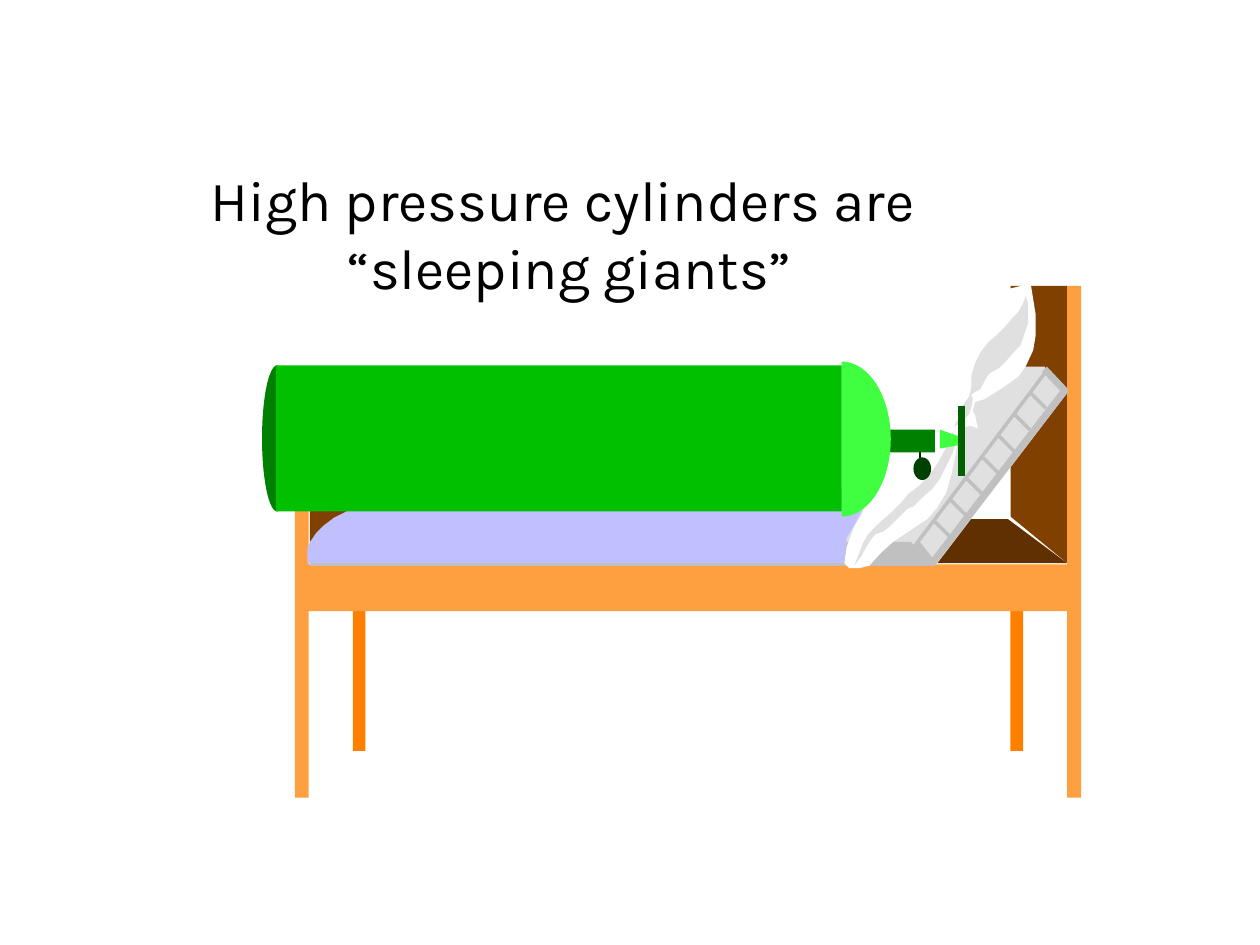
from pptx import Presentation
from pptx.dml.color import RGBColor
from pptx.enum.shapes import MSO_CONNECTOR, MSO_SHAPE
from pptx.enum.text import MSO_ANCHOR, PP_ALIGN
from pptx.oxml.ns import qn
from pptx.util import Pt
from lxml import etree

RECT = MSO_SHAPE.RECTANGLE
OVAL = MSO_SHAPE.OVAL
CHORD = MSO_SHAPE.CHORD
STRAIGHT = MSO_CONNECTOR.STRAIGHT
BOTTOM = MSO_ANCHOR.BOTTOM
CENTER = PP_ALIGN.CENTER

THEME = {
    "font": "Karla", "size": 32.4, "text": "000000",
    "leg": "FF8000", "frame": "FFA040", "board": "804000", "base": "603000",
    "sheet": "E0E0E0", "trim": "C0C0C0", "pillow": "FFFFFF", "cover": "C0C0FF",
    "body": "00C000", "end": "008000", "cap": "40FF40",
    "wheel": "006000", "gauge": "004000", "stem": "002000",
}
TITLE = "High pressure cylinders are \v“sleeping giants”"
GRID = 0.72

PILLOW = [
    (818, 225), (802, 229), (789, 231), (770, 237), (759, 241), (745, 256),
    (737, 264), (732, 278), (728, 293), (726, 303), (726, 313), (728, 324),
    (732, 330), (736, 332), (728, 336), (718, 344), (711, 352), (701, 371),
    (691, 389), (684, 408), (678, 418), (672, 434), (670, 447), (674, 451),
    (682, 451), (690, 449), (699, 439), (709, 430), (724, 420), (736, 412),
    (743, 404), (751, 391), (755, 377), (759, 359), (760, 344), (762, 340),
    (770, 338), (776, 340), (774, 330), (772, 326), (774, 319), (781, 317),
    (797, 307), (808, 299), (814, 291), (820, 278), (822, 266), (822, 250)]
UPPER = [
    (814, 235), (812, 241), (808, 248), (802, 254), (797, 260), (791, 266),
    (784, 272), (778, 280), (774, 288), (771, 298), (771, 307), (769, 315),
    (763, 323), (759, 327), (763, 327), (763, 329), (759, 335), (757, 339),
    (763, 335), (769, 329), (771, 323), (772, 317), (771, 313), (774, 311),
    (778, 309), (780, 305), (784, 298), (786, 296), (793, 292), (799, 286),
    (804, 280), (810, 274), (812, 268), (816, 256), (816, 241)]
LOWER = [
    (756, 343), (754, 349), (750, 357), (744, 368), (737, 378), (729, 386),
    (721, 392), (716, 398), (706, 408), (697, 416), (689, 424), (685, 431),
    (682, 439), (678, 449), (684, 441), (687, 435), (693, 426), (695, 424),
    (701, 422), (706, 418), (710, 414), (714, 410), (720, 404), (725, 402),
    (729, 398), (733, 394), (740, 388), (746, 380), (750, 372), (756, 360),
    (758, 353), (759, 349), (758, 345)]
COVER = [
    (670, 447), (244, 447), (244, 435), (247, 429), (251, 423), (257, 417),
    (265, 411), (273, 407), (280, 403), (286, 399), (290, 393), (296, 391),
    (301, 387), (690, 387), (690, 393), (684, 405), (678, 417), (672, 427)]
FRAME = [
    (245, 448), (847, 448), (847, 227), (858, 227), (858, 633), (847, 633),
    (847, 485), (245, 485), (245, 633), (234, 633), (234, 324), (245, 324)]
MATTRESS = [
    (246, 447), (744, 447), (847, 312), (829, 291), (795, 291), (710, 400),
    (305, 400), (246, 430)]

SLATS = [(817 - 12.67 * i, 311 + 17 * i) for i in range(7)]

BED = [
    ("shape", "leg", RECT, (280, 461, 10, 135)),
    ("shape", "leg", RECT, (802, 461, 10, 135)),
    ("area", "board", [(302, 300), (246, 324), (246, 447), (302, 410)]),
    ("area", "base", [(304, 412), (246, 447), (847, 447), (800, 412)]),
    ("area", "board", [(802, 410), (847, 447), (847, 227), (802, 227)]),
    ("area", "frame", FRAME),
    ("area", "sheet", MATTRESS),
    ("edge", "trim", [(829, 293), (845, 310), (740, 447), (728, 432)], 4),
    *[("line", "trim", (x, y, x + 13, y + 13), 2) for x, y in SLATS],
    ("line", "trim", (724, 436, 830, 295), 2),
    ("area", "trim", [(246, 449), (738, 449), (723, 430), (246, 430)]),
    ("area", "pillow", PILLOW),
    ("area", "sheet", UPPER),
    ("area", "sheet", LOWER),
    ("area", "cover", COVER),
]
TANK = [
    ("line", "stem", (730, 353, 730, 369), 1),
    ("shape", "gauge", OVAL, (725, 363, 14, 18)),
    ("area", "cap", [(763, 347), (746, 341), (746, 356), (763, 353)]),
    ("shape", "end", RECT, (704, 341, 38, 18)),
    ("line", "wheel", (763, 322, 763, 378), 4),
    ("shape", "cap", CHORD, (629, 287, 78, 123)),
    ("shape", "end", OVAL, (208, 290, 24, 116)),
    ("shape", "body", RECT, (219, 290, 449, 116)),
]


def tint(name):
    return RGBColor.from_string(THEME[name])


def place(nums):
    return [Pt(n * GRID) for n in nums]


def paint(shape, name):
    shape.shadow.inherit = False
    shape.fill.solid()
    shape.fill.fore_color.rgb = tint(name)
    shape.line.fill.background()


def stroke(shape, name, width):
    shape.line.color.rgb = tint(name)
    shape.line.width = Pt(width)


def trace(group, points, close):
    pen = group.shapes.build_freeform(*points[0], scale=Pt(GRID))
    pen.add_line_segments(points[1:], close=close)
    return pen.convert_to_shape()


def add_shape(group, name, kind, box):
    shape = group.shapes.add_shape(kind, *place(box))
    if kind == CHORD:
        shape.adjustments[0] = 162
        shape.adjustments[1] = 54
    paint(shape, name)


def add_area(group, name, points):
    paint(trace(group, points, True), name)


def add_edge(group, name, points, width):
    shape = trace(group, points, False)
    shape.shadow.inherit = False
    shape.fill.background()
    stroke(shape, name, width)


def add_line(group, name, ends, width):
    line = group.shapes.add_connector(STRAIGHT, *place(ends))
    stroke(line, name, width)
    props = line._element.find(qn("p:spPr"))
    etree.SubElement(props, qn("a:effectLst"))


def add_title(slide):
    box = slide.shapes.add_textbox(*place((133, 117, 638, 127)))
    frame = box.text_frame
    frame.word_wrap = True
    frame.vertical_anchor = BOTTOM
    frame.text = TITLE
    para = frame.paragraphs[0]
    para.alignment = CENTER
    para.font.name = THEME["font"]
    para.font.size = Pt(THEME["size"])
    para.font.color.rgb = tint("text")


DRAW = {"shape": add_shape, "area": add_area, "edge": add_edge, "line": add_line}


def main():
    deck = Presentation()
    deck.slide_width, deck.slide_height = Pt(720), Pt(540)
    slide = deck.slides.add_slide(deck.slide_layouts[6])
    add_title(slide)
    group = slide.shapes.add_group_shape()
    for kind, *part in BED + TANK:
        DRAW[kind](group, *part)
    deck.save("out.pptx")


if __name__ == "__main__":
    main()
